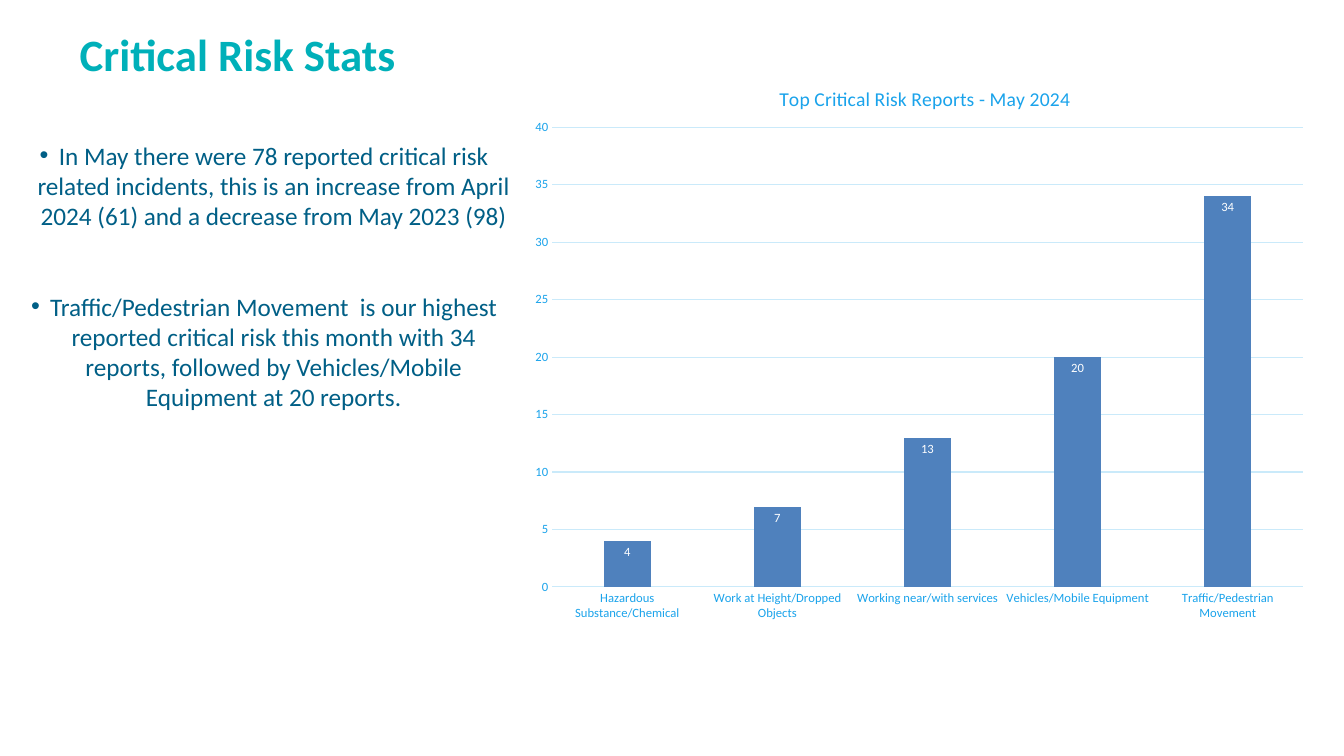
from lxml.etree import SubElement
from pptx import Presentation
from pptx.chart.data import CategoryChartData
from pptx.dml.color import RGBColor
from pptx.enum.chart import XL_CHART_TYPE, XL_LABEL_POSITION, XL_TICK_MARK
from pptx.enum.text import MSO_ANCHOR, MSO_AUTO_SIZE, PP_ALIGN
from pptx.oxml import parse_xml
from pptx.oxml.ns import nsdecls, qn
from pptx.util import Inches, Pt

COLORS = {
    "title": "00B0B9",
    "body": "005F86",
    "axis": "1AA3EB",
    "grid": "CAEAFA",
    "column": "4F81BD",
    "chart": "0A5075",
    "label": "FFFFFF",
}
FINDINGS = [
    "In May there were 78 reported critical risk related incidents, this is an "
    "increase from April 2024 (61) and a decrease from May 2023 (98)",
    "Traffic/Pedestrian Movement  is our highest reported critical risk this "
    "month with 34 reports, followed by Vehicles/Mobile Equipment at 20 reports.",
]
REPORTS = {
    "Hazardous Substance/Chemical": 4,
    "Work at Height/Dropped Objects": 7,
    "Working near/with services": 13,
    "Vehicles/Mobile Equipment": 20,
    "Traffic/Pedestrian Movement": 34,
}


def apply(target, values):
    """Set every attribute named in a dict of format values."""
    for name, value in values.items():
        setattr(target, name, value)


def style_font(font, size, color, bold=False):
    """Give a font its face, size, weight and colour."""
    apply(font, {"name": "Calibri", "size": Pt(size), "bold": bold})
    font.color.rgb = RGBColor.from_string(COLORS[color])


def style_line(line, color):
    """Give a chart line its colour and width."""
    line.color.rgb = RGBColor.from_string(COLORS[color])
    line.width = Pt(0.75)


def place(box, left, top, width, height):
    """Move a placeholder and prepare its text frame."""
    apply(box, {"left": Inches(left), "top": Inches(top),
                "width": Inches(width), "height": Inches(height)})
    apply(box.text_frame, {"word_wrap": True, "auto_size": MSO_AUTO_SIZE.NONE,
                           "vertical_anchor": MSO_ANCHOR.TOP})


def fill_title(box, text):
    """Write the slide heading."""
    place(box, 0.69, 0.3, 11.95, 0.93)
    para = box.text_frame.paragraphs[0]
    para.text = text
    apply(para, {"alignment": PP_ALIGN.LEFT, "line_spacing": Pt(32)})
    style_font(para.font, 32, "title", bold=True)


def fill_findings(box, findings):
    """Write the centred bullet list."""
    place(box, 0.08, 1.34, 5.08, 5.03)
    frame = box.text_frame
    for index, text in enumerate(findings):
        para = frame.add_paragraph() if index else frame.paragraphs[0]
        para.text = text
        apply(para, {"alignment": PP_ALIGN.CENTER, "line_spacing": 1.0,
                     "space_before": Pt(43 if index else 0)})
        properties = para._p.get_or_add_pPr()
        properties.set("marL", str(Inches(0.19)))
        properties.set("indent", str(-Inches(0.19)))
        SubElement(properties, qn("a:buFont")).set("typeface", "Arial")
        SubElement(properties, qn("a:buChar")).set("char", "•")
        style_font(para.font, 18, "body")


def set_layout(element, index, target="", **fractions):
    """Fix the place of a chart part as fractions of the chart."""
    for layout in element.findall(qn("c:layout")):
        element.remove(layout)
    parts = target + '<c:xMode val="edge"/><c:yMode val="edge"/>'
    parts += "".join(f'<c:{key} val="{value}"/>' for key, value in fractions.items())
    element.insert(index, parse_xml(
        f'<c:layout {nsdecls("c")}><c:manualLayout>{parts}</c:manualLayout></c:layout>'))


def style_axes(chart):
    """Format the category and value axes."""
    categories, values = chart.category_axis, chart.value_axis
    for axis in (categories, values):
        apply(axis, {"major_tick_mark": XL_TICK_MARK.NONE,
                     "minor_tick_mark": XL_TICK_MARK.NONE})
        style_font(axis.tick_labels.font, 9, "axis")
    style_line(categories.format.line, "grid")
    apply(values, {"minimum_scale": 0, "maximum_scale": 40, "major_unit": 5,
                   "has_major_gridlines": True})
    values.format.line.fill.background()
    style_line(values.major_gridlines.format.line, "grid")


def style_columns(plot):
    """Format the columns and their value labels."""
    apply(plot, {"gap_width": 219, "overlap": -27, "vary_by_categories": False})
    series = plot.series[0]
    series.format.fill.solid()
    series.format.fill.fore_color.rgb = RGBColor.from_string(COLORS["column"])
    labels = series.data_labels
    apply(labels, {"show_value": True, "position": XL_LABEL_POSITION.INSIDE_END})
    style_font(labels.font, 9, "label")


def add_report_chart(page, title, reports):
    """Add the column chart of reports by risk."""
    data = CategoryChartData()
    data.categories = list(reports)
    data.add_series("Series 1", list(reports.values()))
    chart = page.shapes.add_chart(
        XL_CHART_TYPE.COLUMN_CLUSTERED, Inches(5.16), Inches(0.58),
        Inches(7.92), Inches(5.7), data).chart
    style_font(chart.font, 10, "chart")
    apply(chart, {"has_legend": False, "has_title": True})
    para = chart.chart_title.text_frame.paragraphs[0]
    span = para.add_run()
    span.text = title
    style_font(span.font, 14, "axis")
    set_layout(chart.chart_title._element, 1, x=0.32, y=0.04)
    set_layout(chart._chartSpace.chart.plotArea, 0,
               '<c:layoutTarget val="inner"/>', x=0.04, y=0.12, w=0.94, h=0.8)
    style_axes(chart)
    style_columns(chart.plots[0])


def main():
    """Build the slide and save it."""
    deck = Presentation()
    apply(deck, {"slide_width": Inches(13.33), "slide_height": Inches(7.5)})
    page = deck.slides.add_slide(deck.slide_layouts[1])
    fill_title(page.shapes.title, "Critical Risk Stats")
    fill_findings(page.placeholders[1], FINDINGS)
    add_report_chart(page, "Top Critical Risk Reports - May 2024", REPORTS)
    deck.save("out.pptx")


if __name__ == "__main__":
    main()
